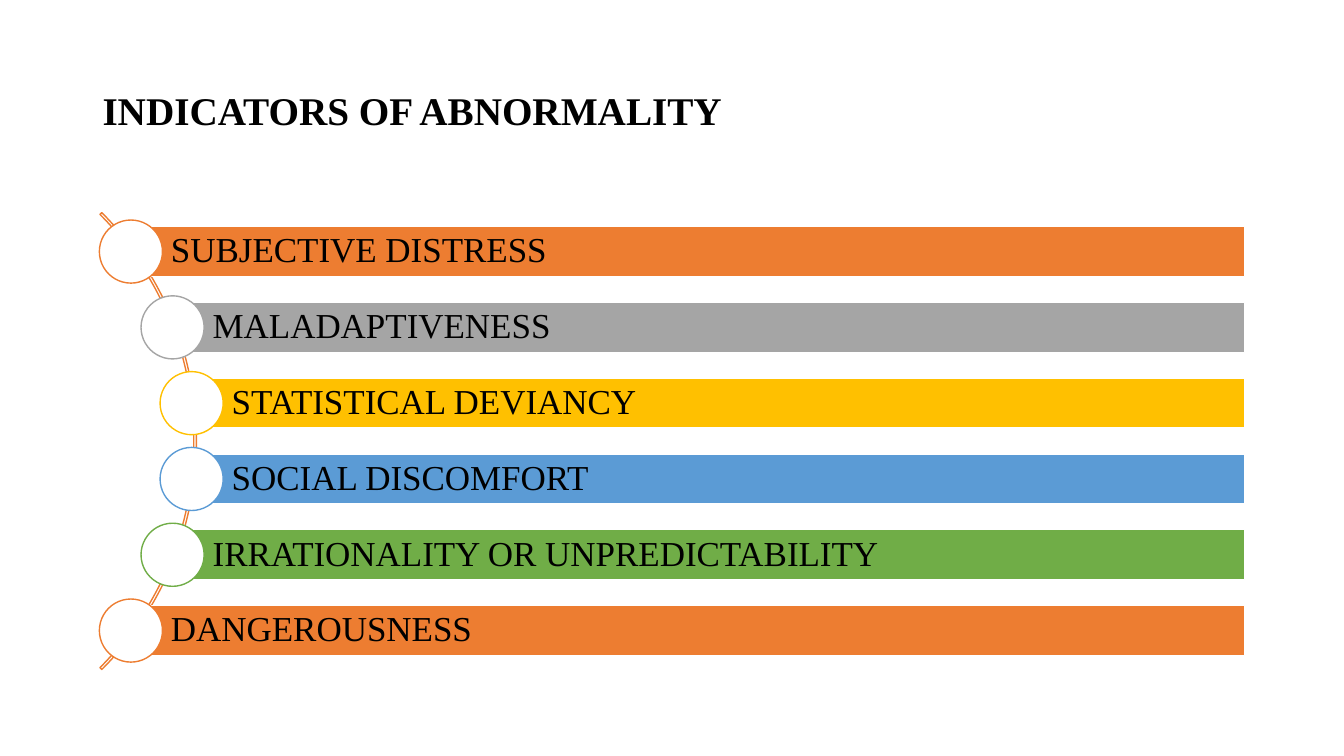
from dataclasses import dataclass

import pptx
import pptx.dml.color
import pptx.enum.shapes
import pptx.enum.text
import pptx.util
from pptx.util import Cm

SHAPES = pptx.enum.shapes.MSO_SHAPE


@dataclass(frozen=True)
class Theme:
    font: str = "Times New Roman"
    title_size: int = 28
    label_size: int = 25
    line_width: int = 1
    text: str = "000000"
    white: str = "FFFFFF"
    orange: str = "ED7D31"
    gray: str = "A5A5A5"
    yellow: str = "FFC000"
    blue: str = "5B9BD5"
    green: str = "70AD47"


THEME = Theme()

# Label, colour, and horizontal centre of the circle in cm
INDICATORS = [
    ("SUBJECTIVE DISTRESS", THEME.orange, 3.3),
    ("MALADAPTIVENESS", THEME.gray, 4.35),
    ("STATISTICAL DEVIANCY", THEME.yellow, 4.83),
    ("SOCIAL DISCOMFORT", THEME.blue, 4.83),
    ("IRRATIONALITY OR UNPREDICTABILITY", THEME.green, 4.35),
    ("DANGEROUSNESS", THEME.orange, 3.3),
]
FIRST_CENTER = 6.34
ROW_PITCH = 1.91
BAR_RIGHT = 31.36
BAR_HEIGHT = 1.26
CIRCLE_SIZE = 1.59
ARC_SIZE = 16.28
ARC_LEFT = -11.33


def rgb(color):
    return pptx.dml.color.RGBColor.from_string(color)


def write_text(frame, text, size, bold=False, **margins):
    """Put one left-aligned, vertically centred line into a text frame."""
    frame_format = {
        "text": text,
        "word_wrap": True,
        "auto_size": pptx.enum.text.MSO_AUTO_SIZE.NONE,
        "vertical_anchor": pptx.enum.text.MSO_ANCHOR.MIDDLE,
        **margins,
    }
    for name, value in frame_format.items():
        setattr(frame, name, value)
    line = frame.paragraphs[0]
    line.alignment = pptx.enum.text.PP_ALIGN.LEFT
    line.line_spacing = 0.9
    font = line.runs[0].font
    font_format = {"name": THEME.font, "size": pptx.util.Pt(size), "bold": bold}
    for name, value in font_format.items():
        setattr(font, name, value)
    font.color.rgb = rgb(THEME.text)


def add_outlined(slide, kind, left, top, width, height, line, fill=None):
    """Add a flat preset shape, placed in cm; no fill colour leaves it hollow."""
    shape = slide.shapes.add_shape(kind, Cm(left), Cm(top), Cm(width), Cm(height))
    shape.shadow.inherit = False
    if fill:
        shape.fill.solid()
        shape.fill.fore_color.rgb = rgb(fill)
    else:
        shape.fill.background()
    shape.line.color.rgb = rgb(line)
    shape.line.width = pptx.util.Pt(THEME.line_width)
    return shape


def add_title(slide, text):
    title = slide.shapes.title
    place = {"left": 2.33, "top": 1.01, "width": 29.21, "height": 3.68}
    for name, value in place.items():
        setattr(title, name, Cm(value))
    write_text(title.text_frame, text, THEME.title_size, bold=True)


def add_arc(slide):
    middle = FIRST_CENTER + ROW_PITCH * (len(INDICATORS) - 1) / 2
    arc = add_outlined(slide, SHAPES.BLOCK_ARC, ARC_LEFT, middle - ARC_SIZE / 2,
                       ARC_SIZE, ARC_SIZE, THEME.orange)
    # Start angle, end angle (both in units of 100000/60000 degree), thickness
    for index, value in enumerate((189, 27, 0.004)):
        arc.adjustments[index] = value


def add_indicator(slide, label, color, center_x, center_y):
    bar = add_outlined(slide, SHAPES.RECTANGLE, center_x, center_y - BAR_HEIGHT / 2,
                       BAR_RIGHT - center_x, BAR_HEIGHT, THEME.white, color)
    write_text(bar.text_frame, label, THEME.label_size, margin_left=Cm(1.01),
               margin_right=Cm(0.18), margin_top=Cm(0.18), margin_bottom=Cm(0.18))
    radius = CIRCLE_SIZE / 2
    add_outlined(slide, SHAPES.OVAL, center_x - radius, center_y - radius,
                 CIRCLE_SIZE, CIRCLE_SIZE, color, THEME.white)


def main():
    deck = pptx.Presentation()
    deck.slide_width, deck.slide_height = Cm(33.87), Cm(19.05)
    slide = deck.slides.add_slide(deck.slide_layouts.get_by_name("Title Only"))
    add_title(slide, "INDICATORS OF ABNORMALITY")
    add_arc(slide)
    for row, (label, color, center_x) in enumerate(INDICATORS):
        add_indicator(slide, label, color, center_x, FIRST_CENTER + row * ROW_PITCH)
    deck.save("out.pptx")


if __name__ == "__main__":
    main()
